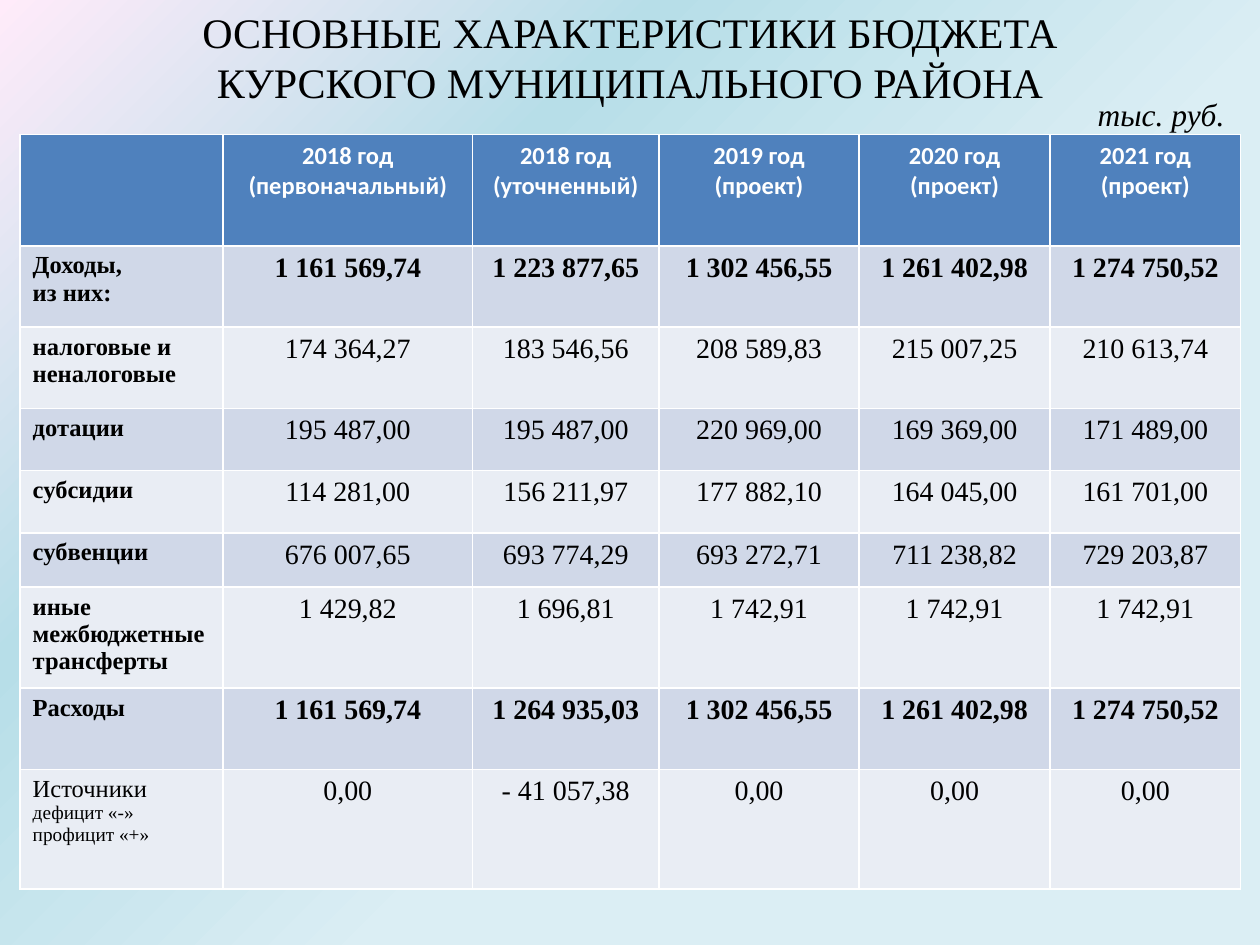
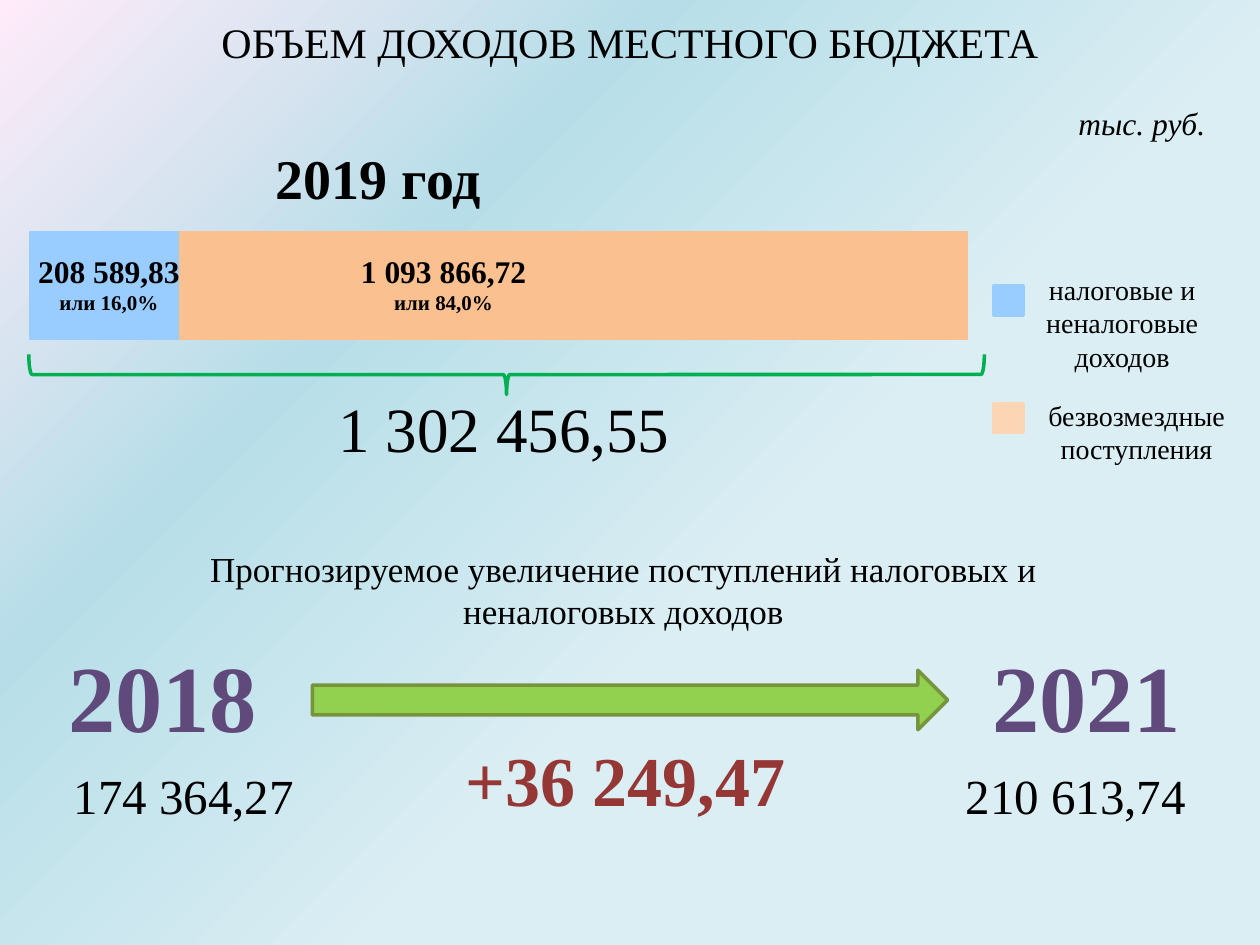
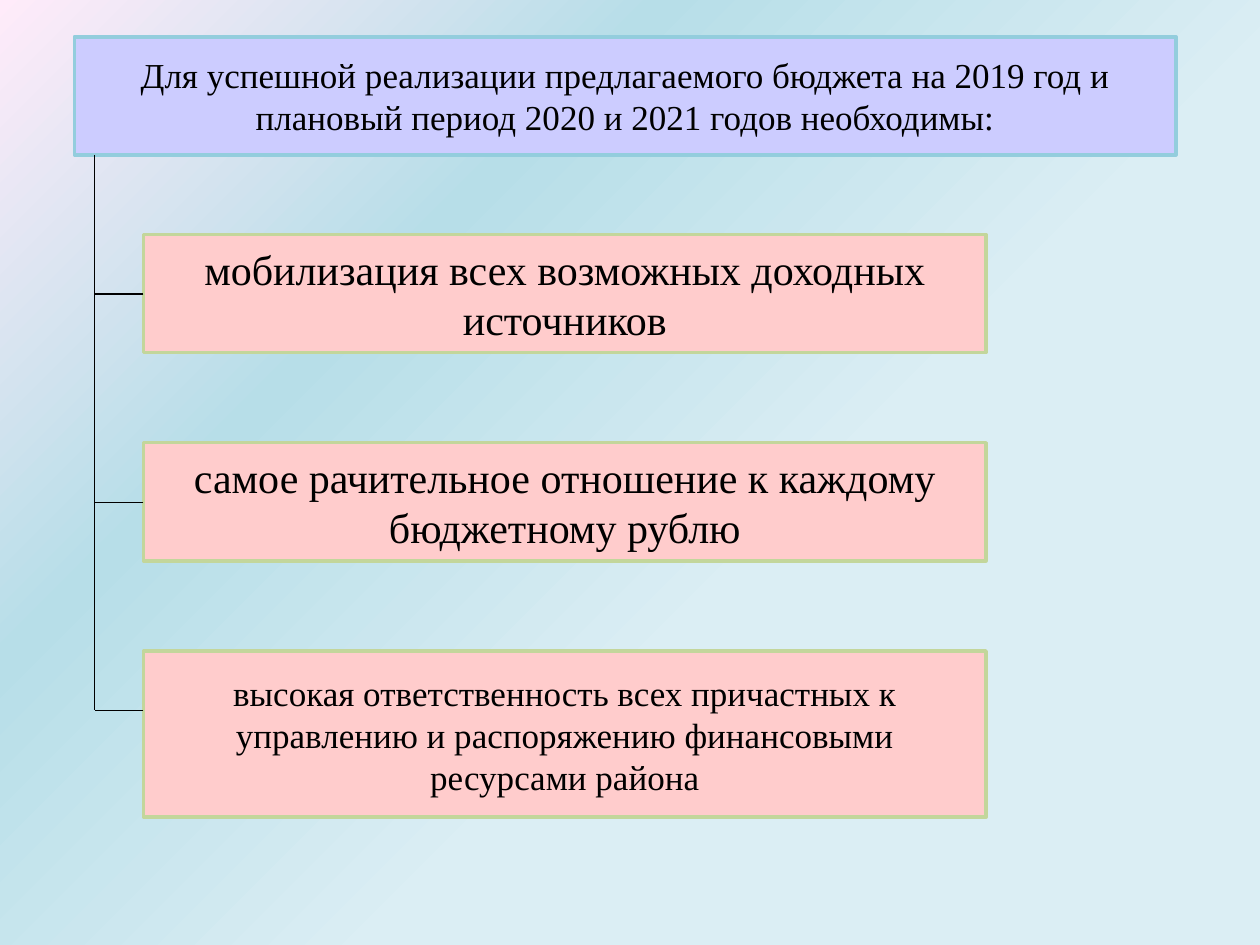
import pptx
import pptx.chart.data
import pptx.dml.color
import pptx.enum.chart
import pptx.enum.shapes
import pptx.enum.text
import pptx.oxml
import pptx.oxml.ns
import pptx.util

Pt = pptx.util.Pt
qn = pptx.oxml.ns.qn
SHAPE = pptx.enum.shapes.MSO_SHAPE
ALIGN = pptx.enum.text.PP_ALIGN
ANCHOR = pptx.enum.text.MSO_ANCHOR

SERIF = "Times New Roman"
BLACK = "000000"
PURPLE = "604A7B"
BLUE = "99CCFF"
NS = 'xmlns:a="http://schemas.openxmlformats.org/drawingml/2006/main"'


def paint(fill, color):
    fill.solid()
    fill.fore_color.rgb = pptx.dml.color.RGBColor.from_string(color)


def write(tf, text, size, small=None, color=BLACK, font=SERIF, bold=False,
          italic=False, align=ALIGN.CENTER, anchor=ANCHOR.TOP, wrap=True):
    tf.word_wrap = wrap
    tf.vertical_anchor = anchor
    for i, line in enumerate(text.split("\n")):
        p = tf.add_paragraph() if i else tf.paragraphs[0]
        p.alignment = align
        r = p.add_run()
        r.text = line
        r.font.name = font
        r.font.size = Pt(small if i and small else size)
        r.font.bold = bold
        r.font.italic = italic
        paint(r.font.fill, color)


prs = pptx.Presentation()
prs.slide_width = Pt(720)
prs.slide_height = Pt(540)

master = prs.slide_master
master.background.fill.solid()
bg = master.element.find(".//" + qn("p:bgPr"))
stops = "".join(
    f'<a:gs pos="{pos}000"><a:srgbClr val="{color}"/></a:gs>'
    for pos, color in [(0, "DBEEF4"), (40, "DBEEF4"), (70, "B7DEE8"), (100, "FFEBFA")])
gradient = pptx.oxml.parse_xml(
    f'<a:gradFill {NS} rotWithShape="1"><a:gsLst>{stops}</a:gsLst>'
    '<a:path path="circle"><a:fillToRect l="100000" t="100000"/></a:path></a:gradFill>')
bg.replace(bg.find(qn("a:solidFill")), gradient)

titles = [
    ("ОСНОВНЫЕ ХАРАКТЕРИСТИКИ БЮДЖЕТА КУРСКОГО МУНИЦИПАЛЬНОГО РАЙОНА",
     (82, 0, 556, 65.5), 24, ANCHOR.TOP),
    ("ОБЪЕМ ДОХОДОВ МЕСТНОГО БЮДЖЕТА", (82, 6, 556, 36), 24, ANCHOR.TOP),
    ("Для успешной реализации предлагаемого бюджета на 2019 год и плановый период "
     "2020 и 2021 годов необходимы:", (42.5, 21, 629.5, 67.5), 20, ANCHOR.MIDDLE),
]
for text, box, size, anchor in titles:
    s = prs.slides.add_slide(prs.slide_layouts[5])
    sp = s.shapes.title
    sp.left, sp.top, sp.width, sp.height = map(Pt, box)
    sp.text_frame.auto_size = pptx.enum.text.MSO_AUTO_SIZE.NONE
    write(sp.text_frame, text, size, anchor=anchor)
budget, income, needs = prs.slides

for s, x, y in [(budget, 607, 50.5), (income, 596, 56)]:
    sp = s.shapes.add_textbox(Pt(x), Pt(y), Pt(113), Pt(29))
    write(sp.text_frame, "тыс. руб.", 18, italic=True)

header = ["", "2018 год (первоначальный)", "2018 год (уточненный)",
          "2019 год\n(проект)", "2020 год (проект)", "2021 год (проект)"]
rows = [
    ["Доходы,\nиз них:", "1 161 569,74", "1 223 877,65", "1 302 456,55", "1 261 402,98", "1 274 750,52"],
    ["налоговые и неналоговые", "174 364,27", "183 546,56", "208 589,83", "215 007,25", "210 613,74"],
    ["дотации", "195 487,00", "195 487,00", "220 969,00", "169 369,00", "171 489,00"],
    ["субсидии", "114 281,00", "156 211,97", "177 882,10", "164 045,00", "161 701,00"],
    ["субвенции", "676 007,65", "693 774,29", "693 272,71", "711 238,82", "729 203,87"],
    ["иные межбюджетные трансферты", "1 429,82", "1 696,81", "1 742,91", "1 742,91", "1 742,91"],
    ["Расходы", "1 161 569,74", "1 264 935,03", "1 302 456,55", "1 261 402,98", "1 274 750,52"],
    ["Источники\nдефицит «-»\nпрофицит «+»", "0,00", "- 41 057,38", "0,00", "0,00", "0,00"],
]
widths = [116, 142.5, 106.5, 114.5, 109, 109]
heights = [63.5, 46.5, 46.5, 35.5, 35.5, 31, 57.5, 46.5, 68.5]
table = budget.shapes.add_table(len(heights), len(widths), Pt(11.5), Pt(77),
                                Pt(sum(widths)), Pt(sum(heights))).table
for column, width in zip(table.columns, widths):
    column.width = Pt(width)
for row, height in zip(table.rows, heights):
    row.height = Pt(height)
for i, values in enumerate([header] + rows):
    total = values[0].startswith(("Доходы", "Расходы"))
    last = i == len(rows)
    for j, value in enumerate(values):
        cell = table.cell(i, j)
        paint(cell.fill, "4F81BD" if i == 0 else "D0D8E8" if i % 2 else "E9EDF4")
        if i == 0:
            write(cell.text_frame, value, 14, color="FFFFFF", font="Calibri", bold=True)
        elif j == 0:
            write(cell.text_frame, value, 14, small=11 if last else None,
                  bold=not last, align=ALIGN.LEFT)
        else:
            write(cell.text_frame, value, 16, bold=total)

data = pptx.chart.data.CategoryChartData()
data.categories = ["1"]
data.add_series("Series 1", [19])
data.add_series("Series 2", [100])
chart = income.shapes.add_chart(pptx.enum.chart.XL_CHART_TYPE.BAR_STACKED,
                                Pt(16.5), Pt(67.5), Pt(607.5), Pt(174), data).chart
chart.has_legend = False
chart.has_title = False
chart.font.name = "Calibri"
chart.font.size = Pt(18)
paint(chart.font.fill, BLACK)
chart.category_axis.visible = False
chart.value_axis.visible = False
chart.value_axis.has_major_gridlines = False
chart.value_axis.minimum_scale = 0
chart.value_axis.maximum_scale = 128
plot = chart.plots[0]
plot.vary_by_categories = False
plot.gap_width = 150
plot.overlap = 100
for series, color in zip(plot.series, [BLUE, "FAC090"]):
    paint(series.format.fill, color)
area = chart.element.find(".//" + qn("c:plotArea"))
for old in area.findall(qn("c:layout")):
    area.remove(old)
area.insert(0, pptx.oxml.parse_xml(
    '<c:layout xmlns:c="http://schemas.openxmlformats.org/drawingml/2006/chart">'
    '<c:manualLayout><c:layoutTarget val="inner"/><c:xMode val="edge"/><c:yMode val="edge"/>'
    '<c:x val="0"/><c:y val="0.1"/><c:w val="0.95"/><c:h val="0.9"/>'
    '</c:manualLayout></c:layout>'))

for kind, box, fill, line in [
    (SHAPE.LEFT_BRACE, (278, -59, 23, 546), None, "00B050"),
    (SHAPE.RIGHT_ARROW, (178.5, 383, 363, 34), "92D050", "77933C"),
    (SHAPE.RECTANGLE, (568, 163.5, 16.5, 16.5), BLUE, BLUE),
    (SHAPE.RECTANGLE, (568, 230.5, 16.5, 16.5), "FCD5B5", "FCD5B5"),
]:
    sp = income.shapes.add_shape(kind, *map(Pt, box))
    sp.shadow.inherit = False
    paint(sp.line.fill, line)
    sp.line.width = Pt(2)
    if fill:
        paint(sp.fill, fill)
    else:
        sp.fill.background()
        sp.rotation = 270

for text, box, size, fmt in [
    ("2019 год", (134.5, 78.5, 163.5, 46), 32, {"bold": True}),
    ("208 589,83\nили 16,0%", (11.5, 140.5, 101.5, 44), 18, {"small": 12, "bold": True}),
    ("1 093 866,72\nили 84,0%", (168.5, 140.5, 170, 44), 18, {"small": 12, "bold": True}),
    ("1 302 456,55", (152, 219, 272, 51), 36, {}),
    ("налоговые и\nненалоговые доходов", (562.5, 152, 157.5, 65.5), 16, {}),
    ("безвозмездные\nпоступления", (556.5, 224, 186, 46), 16, {}),
    ("Прогнозируемое увеличение поступлений налоговых и неналоговых доходов",
     (112.5, 309.5, 487.5, 55.5), 20, {}),
    ("2018", (31, 361, 124, 72.5), 54, {"color": PURPLE, "bold": True, "wrap": False}),
    ("2021", (559, 361, 124, 72.5), 54, {"color": PURPLE, "bold": True, "wrap": False}),
    ("174 364,27", (20, 434, 170, 41), 28, {}),
    ("+36 249,47", (258, 417.5, 198.5, 55.5), 40,
     {"color": "953735", "bold": True, "wrap": False}),
    ("210 613,74", (524, 434, 181.5, 41), 28, {}),
]:
    sp = income.shapes.add_textbox(*map(Pt, box))
    write(sp.text_frame, text, size, **fmt)

sp = needs.shapes.title
paint(sp.fill, "CCCCFF")
paint(sp.line.fill, "93CDDD")
sp.line.width = Pt(2)

trunk, left, top, step, middle = 54, 82, 134, 119, 34
lines = [(trunk, 88.5, trunk, top + 2 * step + middle)]
for i, (text, height, size) in enumerate([
    ("мобилизация всех возможных доходных источников", 67.5, 24),
    ("самое рачительное отношение к каждому бюджетному рублю", 67.5, 24),
    ("высокая ответственность всех причастных к управлению и распоряжению "
     "финансовыми ресурсами района", 95, 20),
]):
    y = top + i * step
    sp = needs.shapes.add_shape(SHAPE.RECTANGLE, Pt(left), Pt(y), Pt(481.5), Pt(height))
    sp.shadow.inherit = False
    paint(sp.fill, "FFCCCC")
    paint(sp.line.fill, "C3D69B")
    sp.line.width = Pt(2)
    write(sp.text_frame, text, size, anchor=ANCHOR.MIDDLE)
    lines.append((left, y + middle, trunk, y + middle))

for ends in lines:
    sp = needs.shapes.add_connector(pptx.enum.shapes.MSO_CONNECTOR.STRAIGHT, *map(Pt, ends))
    paint(sp.line.fill, BLACK)
    sp.line.width = Pt(0.75)
    sp.element.spPr.append(pptx.oxml.parse_xml(f"<a:effectLst {NS}/>"))

prs.save("out.pptx")
